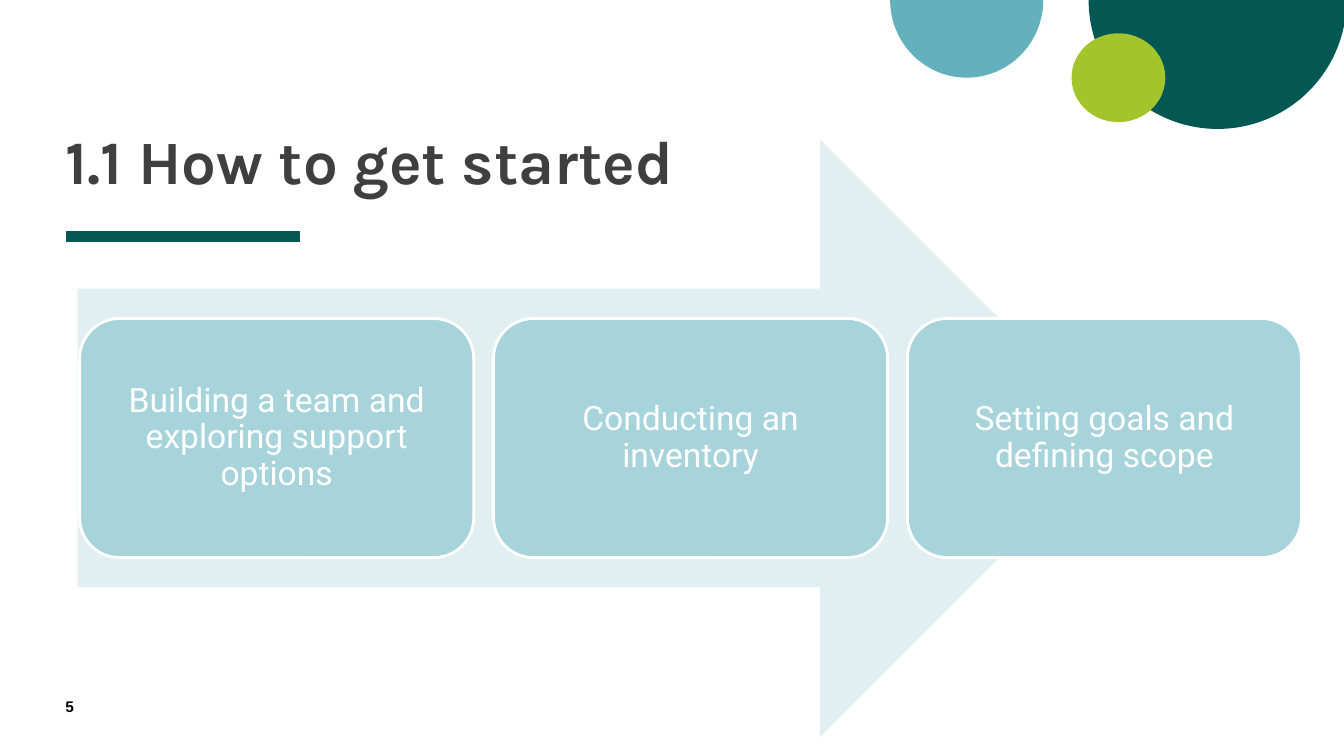
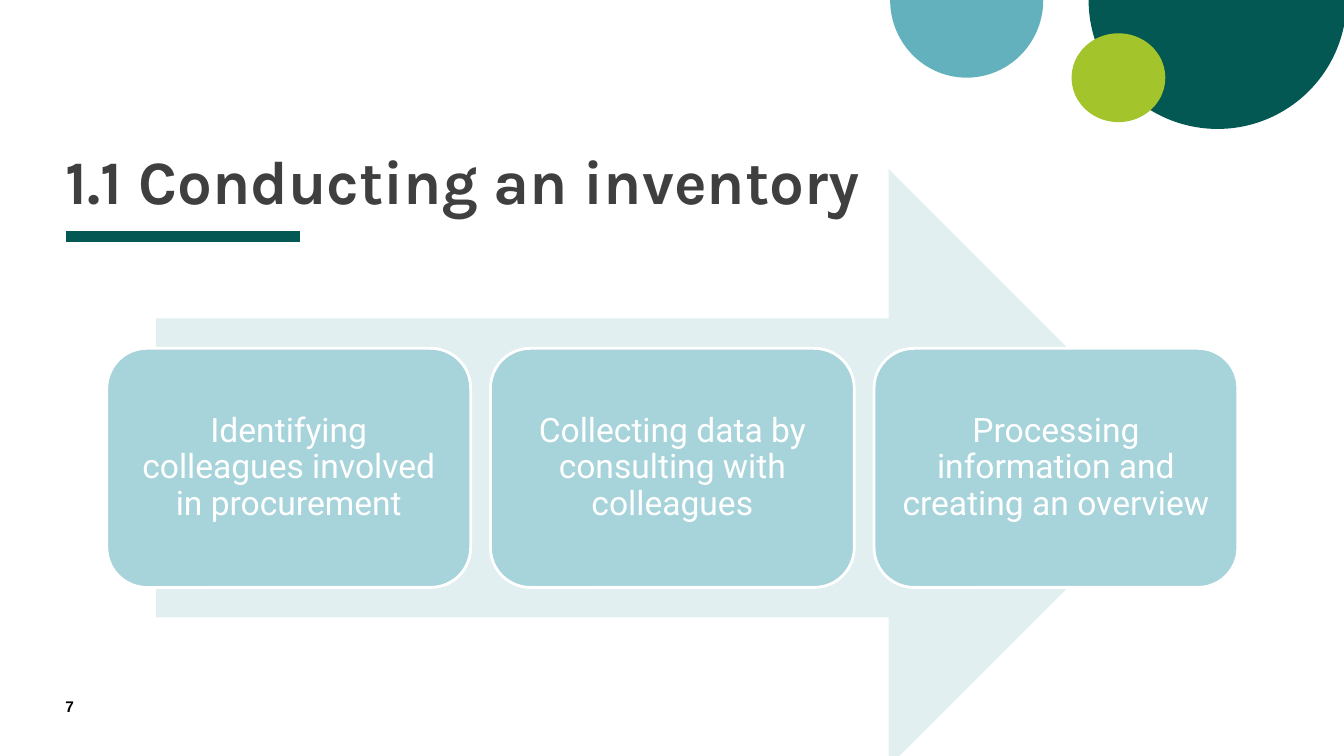
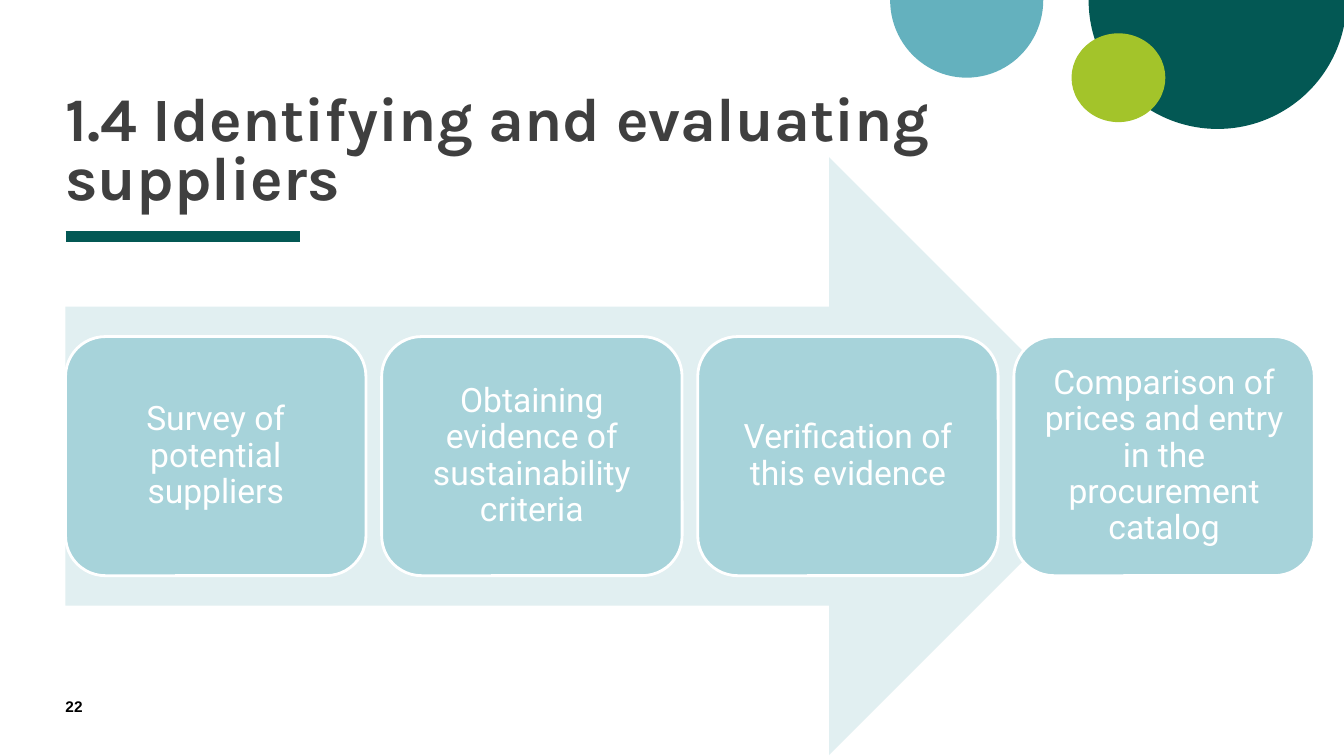
"""Build three process slides, each a row of steps on a broad arrow."""
from dataclasses import dataclass
from lxml.etree import SubElement
from pptx import Presentation
from pptx.dml.color import RGBColor
from pptx.enum.shapes import MSO_CONNECTOR, MSO_SHAPE
from pptx.enum.text import MSO_ANCHOR, PP_ALIGN
from pptx.oxml.ns import qn
from pptx.util import Pt


@dataclass(frozen=True)
class Theme:
    green: str = "035854"
    teal: str = "64B1BE"
    lime: str = "A3C42A"
    pale: str = "E1EFF1"
    card: str = "A7D3DA"
    white: str = "FFFFFF"
    ink: str = "3F3F3F"
    black: str = "000000"
    title: tuple = ("Karla", 44, True)
    body: tuple = ("Roboto", 24, False)
    number: tuple = ("Arial", 11, True)


theme = Theme()


def draw(slide, kind, box, color):
    shape = slide.shapes.add_shape(kind, *map(Pt, box))
    shape.shadow.inherit = False
    shape.fill.solid()
    shape.fill.fore_color.rgb = RGBColor.from_string(color)
    shape.line.fill.background()
    return shape


def write(shape, text, style, color, inset=0, anchor=MSO_ANCHOR.TOP,
          align=PP_ALIGN.LEFT, spacing=1.0):
    frame = shape.text_frame
    frame.word_wrap = True
    frame.vertical_anchor = anchor
    frame.margin_left = frame.margin_right = Pt(inset)
    frame.margin_top = frame.margin_bottom = Pt(inset)
    para = frame.paragraphs[0]
    para.alignment = align
    para.line_spacing = spacing
    run = para.add_run()
    run.text = text
    font = run.font
    font.name, size, font.bold = style
    font.size = Pt(size)
    font.color.rgb = RGBColor.from_string(color)


left = 46.8
tall = 427
high = 170.8
circles = [
    (MSO_SHAPE.PIE, (777.6, -92.2, 184.3, 184.3), theme.green),
    (MSO_SHAPE.PIE, (635.8, -55.4, 109.4, 110.9), theme.teal),
    (MSO_SHAPE.OVAL, (765.4, 23.8, 67, 63.4), theme.lime),
]
pages = [
    {"title": "1.1 How to get started", "box": (15.1, 534.2), "number": "5",
     "arrow": (55.4, 99.4, 743.8), "row": (56.9, 281.5, 14.1), "inset": 10.8,
     "steps": ["Building a team and exploring support options",
               "Conducting an inventory",
               "Setting goals and defining scope"]},
    {"title": "1.1 Conducting an inventory", "box": (29.5, 607.7), "number": "7",
     "arrow": (111.6, 120.7, 736.6), "row": (76.3, 259.9, 14.1), "inset": 9.4,
     "steps": ["Identifying colleagues involved in procurement",
               "Collecting data by consulting with colleagues",
               "Processing information and creating an overview"]},
    {"title": "1.4 Identifying and evaluating suppliers", "box": (26.6, 635.8),
     "number": "22",
     "arrow": (46.8, 112.3, 758.9), "row": (46.8, 214.6, 11.2), "inset": 7.9,
     "steps": ["Survey of potential suppliers",
               "Obtaining evidence of sustainability criteria",
               "Verification of this evidence",
               "Comparison of prices and entry in the procurement catalog"]},
]

deck = Presentation()
deck.slide_width, deck.slide_height = Pt(960), Pt(540)

for page in pages:
    slide = deck.slides.add_slide(deck.slide_layouts[6])

    for kind, box, color in circles:
        shape = draw(slide, kind, box, color)
        if kind == MSO_SHAPE.PIE:
            shape.adjustments[0] = 0
            shape.adjustments[1] = 108
    rule = slide.shapes.add_connector(
        MSO_CONNECTOR.STRAIGHT, Pt(left), Pt(169.2), Pt(214.6), Pt(169.2))
    rule.line.width = Pt(8)
    rule.line.color.rgb = RGBColor.from_string(theme.green)
    SubElement(rule.element.spPr, qn("a:effectLst"))

    top, width = page["box"]
    title = slide.shapes.add_textbox(Pt(left), Pt(top), Pt(width), Pt(125.3))
    write(title, page["title"], theme.title, theme.ink,
          anchor=MSO_ANCHOR.BOTTOM, spacing=0.8)
    number = slide.shapes.add_textbox(Pt(left), Pt(498.2), Pt(41), Pt(19.4))
    write(number, page["number"], theme.number, theme.black)

    start, top, width = page["arrow"]
    draw(slide, MSO_SHAPE.RIGHT_ARROW, (start, top, width, tall), theme.pale)
    start, width, gap = page["row"]
    for i, step in enumerate(page["steps"]):
        box = (start + i * (width + gap), top + (tall - high) / 2, width, high)
        card = draw(slide, MSO_SHAPE.ROUNDED_RECTANGLE, box, theme.card)
        card.line.color.rgb = RGBColor.from_string(theme.white)
        card.line.width = Pt(2)
        write(card, step, theme.body, theme.white, page["inset"],
              MSO_ANCHOR.MIDDLE, PP_ALIGN.CENTER, 0.9)

deck.save("out.pptx")
